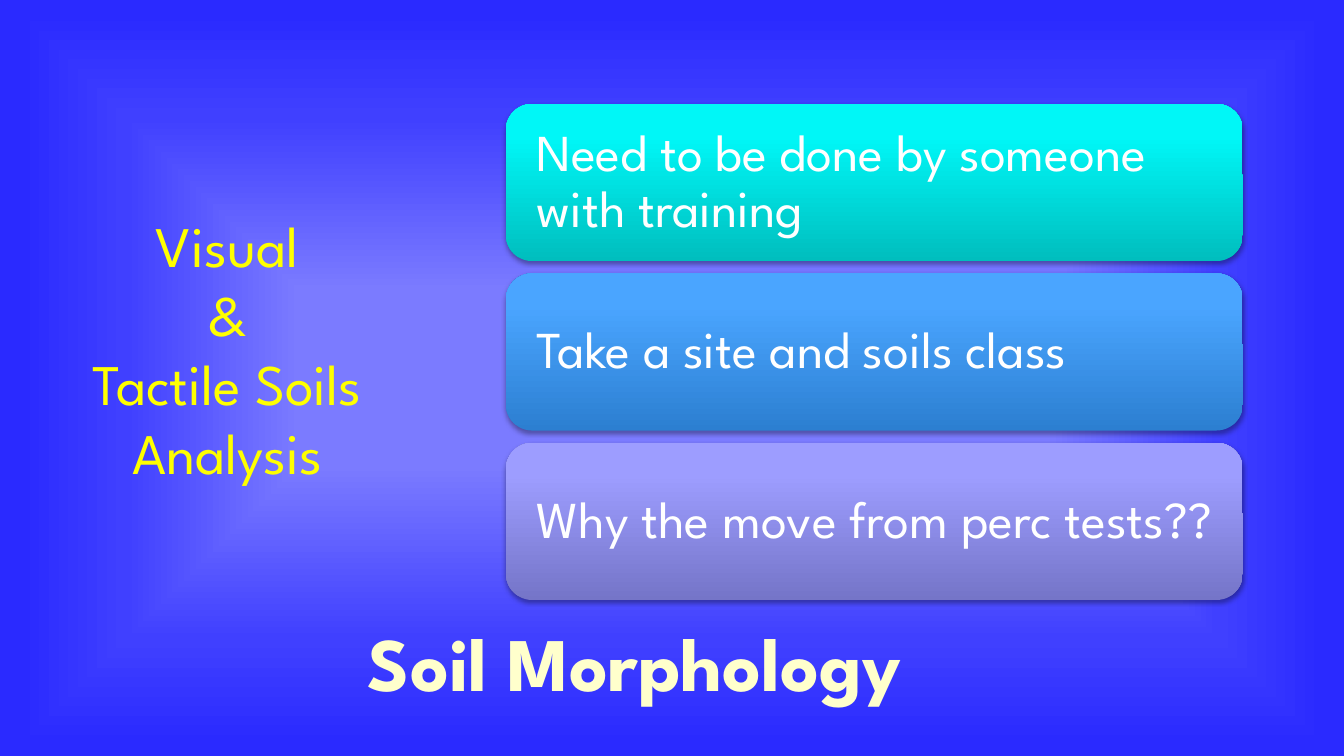
import pptx
import pptx.dml.color
import pptx.enum.shapes
import pptx.enum.text
import pptx.oxml
import pptx.oxml.ns
import pptx.util
from lxml import etree

Cm = pptx.util.Cm
Pt = pptx.util.Pt
qn = pptx.oxml.ns.qn

FONT = "League Spartan"
COLORS = {"topic": "FFFF00", "heading": "FFFFCC", "card": "FFFFFF", "shadow": "000000"}
BACKGROUND = [(3, "7B7BFF"), (23, "7B7BFF"), (69, "4040FF"), (97, "2A2AFF")]
CARDS = [
    ("Need to be done by someone with training",
     [(0, "00BEBE"), (80, "00F7F7"), (100, "00F8F8")]),
    ("Take a site and soils class",
     [(0, "2C7FD1"), (80, "4AA5FF"), (100, "4CA5FF")]),
    ("Why the move from perc tests??",
     [(0, "7575C8"), (80, "9D9DFF"), (100, "9F9FFF")]),
]
CARD_TOP, CARD_PITCH = 2.62, 4.27


def set_gradient(fill, owner, stops, from_center=False):
    """Fill with any number of stops, rising from the bottom or spreading from the center."""
    fill.gradient()
    gradient = next(owner.iter(qn("a:gradFill")))
    for child in list(gradient):
        gradient.remove(child)
    stop_list = etree.SubElement(gradient, qn("a:gsLst"))
    for position, color in stops:
        stop = etree.SubElement(stop_list, qn("a:gs"), pos=str(position * 1000))
        etree.SubElement(stop, qn("a:srgbClr"), val=color)
    if from_center:
        spread = etree.SubElement(gradient, qn("a:path"), path="shape")
        etree.SubElement(spread, qn("a:fillToRect"), l="50000", t="50000", r="50000", b="50000")
    else:
        etree.SubElement(gradient, qn("a:lin"), ang=str(270 * 60000), scaled="0")


def add_soft_shadow(shape):
    shape.shadow.inherit = False
    effects = shape._element.spPr.find(qn("a:effectLst"))
    shadow = etree.SubElement(effects, qn("a:outerShdw"), blurRad=str(Pt(3.1)),
                              dist=str(Pt(1.8)), dir=str(90 * 60000), rotWithShape="0")
    color = etree.SubElement(shadow, qn("a:srgbClr"), val=COLORS["shadow"])
    etree.SubElement(color, qn("a:alpha"), val="35000")


def write(frame, text, size, color, align, bold=False):
    frame.text = text
    frame.vertical_anchor = pptx.enum.text.MSO_ANCHOR.MIDDLE
    for paragraph in frame.paragraphs:
        paragraph.alignment = align
        for run in paragraph.runs:
            run.font.name = FONT
            run.font.size = Pt(size)
            run.font.bold = bold
            run.font.color.rgb = pptx.dml.color.RGBColor.from_string(COLORS[color])


def add_label(slide, box, text, size, color, bold=False, wrap=True):
    label = slide.shapes.add_textbox(*map(Cm, box))
    label.text_frame.word_wrap = wrap
    write(label.text_frame, text, size, color, pptx.enum.text.PP_ALIGN.CENTER, bold)


def add_card(slide, top, text, stops):
    card = slide.shapes.add_shape(pptx.enum.shapes.MSO_SHAPE.ROUNDED_RECTANGLE,
                                  Cm(12.75), Cm(top), Cm(18.57), Cm(3.96))
    set_gradient(card.fill, card._element.spPr, stops)
    card.line.fill.background()
    add_soft_shadow(card)
    frame = card.text_frame
    frame.word_wrap = True
    frame.margin_left = frame.margin_right = Cm(0.58)
    write(frame, text, 37, "card", pptx.enum.text.PP_ALIGN.LEFT)
    frame.paragraphs[0].line_spacing = 0.9


def main():
    deck = pptx.Presentation()
    deck.slide_width, deck.slide_height = Cm(33.87), Cm(19.05)
    slide = deck.slides.add_slide(deck.slide_layouts[6])

    # Background glow
    set_gradient(slide.background.fill, slide._element, BACKGROUND, from_center=True)

    # Topic on the left
    add_label(slide, (1.78, 3.66, 7.9, 10.21), "Visual\v&\vTactile Soils Analysis", 41, "topic")

    # Stack of cards
    for row, (text, stops) in enumerate(CARDS):
        add_card(slide, CARD_TOP + row * CARD_PITCH, text, stops)

    # Heading at the bottom
    add_label(slide, (8.23, 15.39, 15.52, 2.57), "Soil Morphology", 54, "heading",
              bold=True, wrap=False)

    deck.save("out.pptx")


if __name__ == "__main__":
    main()
